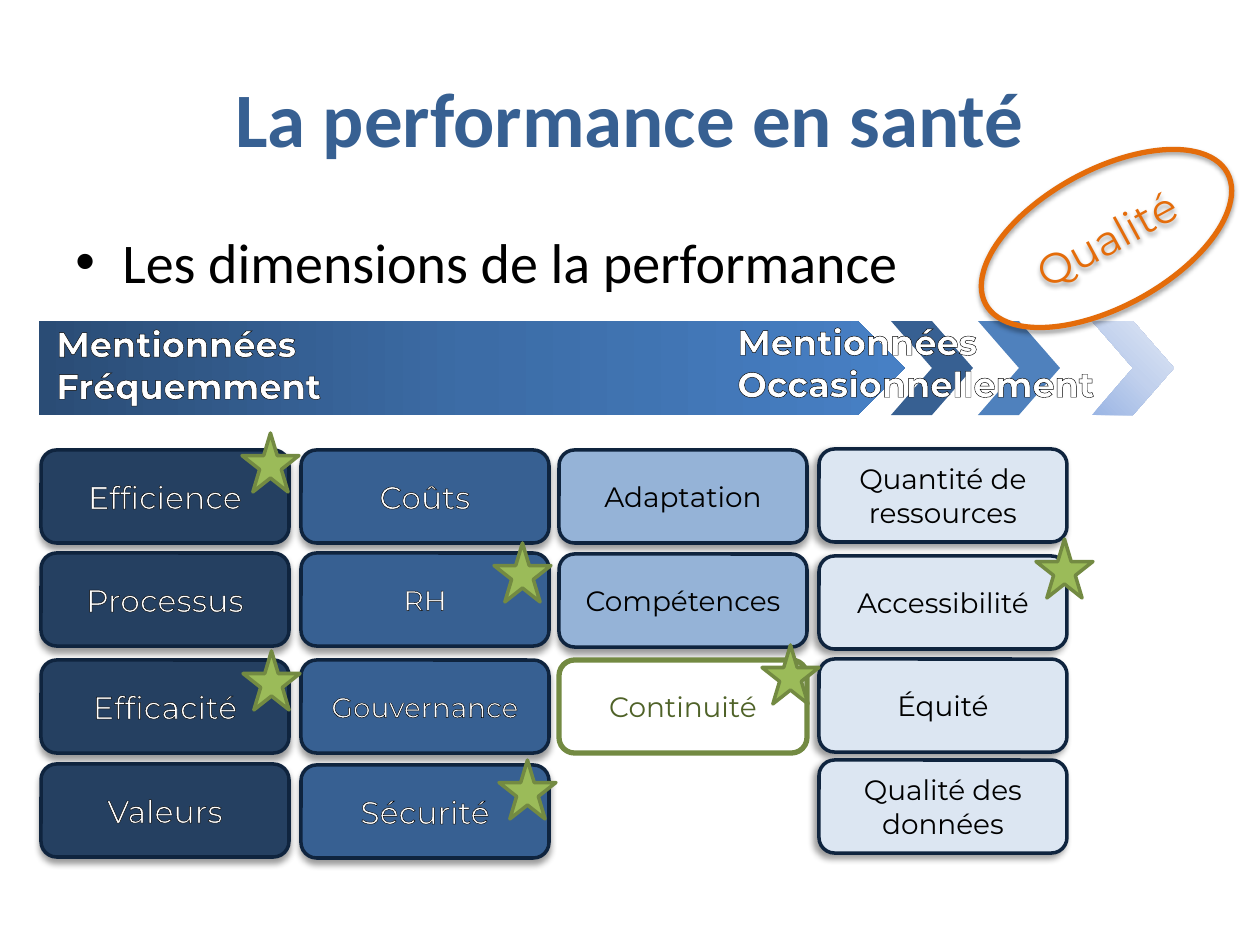
import pptx
import pptx.util
import pptx.oxml
import pptx.oxml.ns
from pptx.dml.color import RGBColor
from pptx.enum.shapes import MSO_SHAPE
from pptx.enum.text import MSO_ANCHOR, PP_ALIGN

BLACK = RGBColor(0x00, 0x00, 0x00)
WHITE = RGBColor(0xFF, 0xFF, 0xFF)
NAVY = RGBColor(0x25, 0x40, 0x61)
BLUE = RGBColor(0x37, 0x60, 0x92)
MID_BLUE = RGBColor(0x4F, 0x81, 0xBD)
LIGHT_BLUE = RGBColor(0x95, 0xB3, 0xD7)
PALE_BLUE = RGBColor(0xDC, 0xE6, 0xF2)
EDGE = RGBColor(0x0F, 0x24, 0x3E)
GREEN = RGBColor(0x9B, 0xBB, 0x59)
GREEN_EDGE = RGBColor(0x73, 0x8A, 0x42)
GREEN_TEXT = RGBColor(0x4F, 0x62, 0x28)
ORANGE = RGBColor(0xE4, 0x6C, 0x0A)

TITLE = "La performance en santé"
BULLET = "Les dimensions de la performance"
BAND_STOPS = [(0, "2A4C75"), (50, "3C6CA6"), (100, "4780C5")]
TIP_STOPS = [(0, "9AB5E4"), (50, "C2D1ED"), (100, "E1E8F5")]
CHEVRONS = [(891, BLUE), (978, MID_BLUE), (1092, None)]
BAND_LABELS = [
    ("Mentionnées\nFréquemment", 44, 316, 566),
    ("Mentionnées\nOccasionnellement", 725, 314, 416),
]
COLUMNS = [
    (41, NAVY, True, 90, [("Efficience", 450, 18), ("Processus", 553, 18),
                          ("Efficacité", 660, 18), ("Valeurs", 764, 18)]),
    (301, BLUE, True, 90, [("Coûts", 450, 18), ("RH", 553, 16),
                           ("Gouvernance", 660, 16), ("Sécurité", 765, 18)]),
    (559, LIGHT_BLUE, False, 90, [("Adaptation", 450, 16), ("Compétences", 554, 16)]),
    (819, PALE_BLUE, False, 135, [("Quantité de ressources", 449, 16), ("Accessibilité", 556, 16),
                                  ("Équité", 659, 16), ("Qualité des données", 760, 16)]),
]
STARS = [(242, 433), (243, 651), (494, 543), (499, 760), (762, 645), (1036, 539)]
BOX_W, BOX_H = 248, 93
BAND_Y, BAND_H = 321, 94


def px(n):
    return pptx.util.Emu(round(n * 914400 / 126))


def element(xml):
    ns = pptx.oxml.ns.nsdecls("a")
    head, rest = xml.split(">", 1)
    slash = "/" if head.endswith("/") else ""
    return pptx.oxml.parse_xml(f"{head.rstrip('/')} {ns}{slash}>{rest}")


def add_shape(kind, x, y, w, h, fill=None, line=None, width=2):
    s = slide.shapes.add_shape(kind, px(x), px(y), px(w), px(h))
    s.shadow.inherit = False
    if fill is None:
        s.fill.background()
    else:
        s.fill.solid()
        s.fill.fore_color.rgb = fill
    if line is None:
        s.line.fill.background()
    else:
        s.line.color.rgb = line
        s.line.width = pptx.util.Pt(width)
    return s


def add_gradient(s, stops, angle):
    s.fill.gradient()
    grad = s.element.spPr.find(pptx.oxml.ns.qn("a:gradFill"))
    gs = "".join(f'<a:gs pos="{pos * 1000}"><a:srgbClr val="{color}"/></a:gs>'
                 for pos, color in stops)
    new = element(f'<a:gradFill rotWithShape="1"><a:gsLst>{gs}</a:gsLst>'
                  f'<a:lin ang="{angle * 60000}" scaled="0"/></a:gradFill>')
    grad.getparent().replace(grad, new)


def add_shadow(s, alpha, blur, dist, angle):
    effects = s.element.spPr.find(pptx.oxml.ns.qn("a:effectLst"))
    effects.append(element(
        f'<a:outerShdw blurRad="{round(blur * 12700)}" dist="{round(dist * 12700)}" '
        f'dir="{angle * 60000}" rotWithShape="0"><a:srgbClr val="000000">'
        f'<a:alpha val="{alpha * 1000}"/></a:srgbClr></a:outerShdw>'))


def set_text(s, text, size, color, font="Montserrat", bold=False, outlined=False,
             align=PP_ALIGN.CENTER, anchor=MSO_ANCHOR.MIDDLE):
    tf = s.text_frame
    tf.text = text
    tf.word_wrap = True
    tf.vertical_anchor = anchor
    for p in tf.paragraphs:
        p.alignment = align
        for r in p.runs:
            r.font.size = pptx.util.Pt(size)
            r.font.name = font
            r.font.bold = bold
            r.font.color.rgb = color
            if outlined:
                r.font._element.insert(0, element(
                    '<a:ln w="9525"><a:solidFill><a:srgbClr val="000000"/></a:solidFill></a:ln>'))


def add_text(x, y, w, h, *args, **kwargs):
    s = slide.shapes.add_textbox(px(x), px(y), px(w), px(h))
    set_text(s, *args, **kwargs)
    return s


prs = pptx.Presentation()
prs.slide_width, prs.slide_height = px(1260), px(945)
slide = prs.slides.add_slide(prs.slide_layouts[6])

add_text(63, 38, 1134, 157, TITLE, 44, BLUE, font="Calibri", bold=True)
s = add_text(63, 221, 1134, 624, BULLET, 32, BLACK, font="Calibri",
             align=PP_ALIGN.LEFT, anchor=MSO_ANCHOR.TOP)
pPr = s.text_frame.paragraphs[0]._p.get_or_add_pPr()
pPr.set("marL", str(px(47)))
pPr.set("indent", str(-px(47)))
pPr.append(element('<a:buFont typeface="Arial"/>'))
pPr.append(element('<a:buChar char="•"/>'))

band = add_shape(MSO_SHAPE.PENTAGON, 39, BAND_Y, 866, BAND_H)
add_gradient(band, BAND_STOPS, 0)
for x, color in CHEVRONS:
    s = add_shape(MSO_SHAPE.CHEVRON, x, BAND_Y, 82, BAND_H, color)
    if color is None:
        add_gradient(s, TIP_STOPS, 315)
for text, x, y, w in BAND_LABELS:
    add_text(x, y, w, 97, text, 20, WHITE, bold=True, outlined=True,
             align=PP_ALIGN.LEFT, anchor=MSO_ANCHOR.TOP)

for x, fill, outlined, angle, boxes in COLUMNS:
    for text, y, size in boxes:
        s = add_shape(MSO_SHAPE.ROUNDED_RECTANGLE, x, y, BOX_W, BOX_H, fill, EDGE)
        add_shadow(s, 40, 4, 3, angle)
        set_text(s, text, size, WHITE if outlined else BLACK, outlined=outlined)

s = add_shape(MSO_SHAPE.ROUNDED_RECTANGLE, 559, 660, BOX_W, BOX_H, None, GREEN_EDGE, 3)
set_text(s, "Continuité", 16, GREEN_TEXT)
for x, y in STARS:
    add_shape(MSO_SHAPE.STAR_5_POINT, x, y, 57, 59, GREEN, GREEN_EDGE)

s = add_shape(MSO_SHAPE.OVAL, 969, 170, 275, 137, None, ORANGE, 3)
s.rotation = 331.5
add_shadow(s, 38, 3.1, 1.6, 90)
set_text(s, "Qualité", 24, ORANGE)

prs.save("out.pptx")
